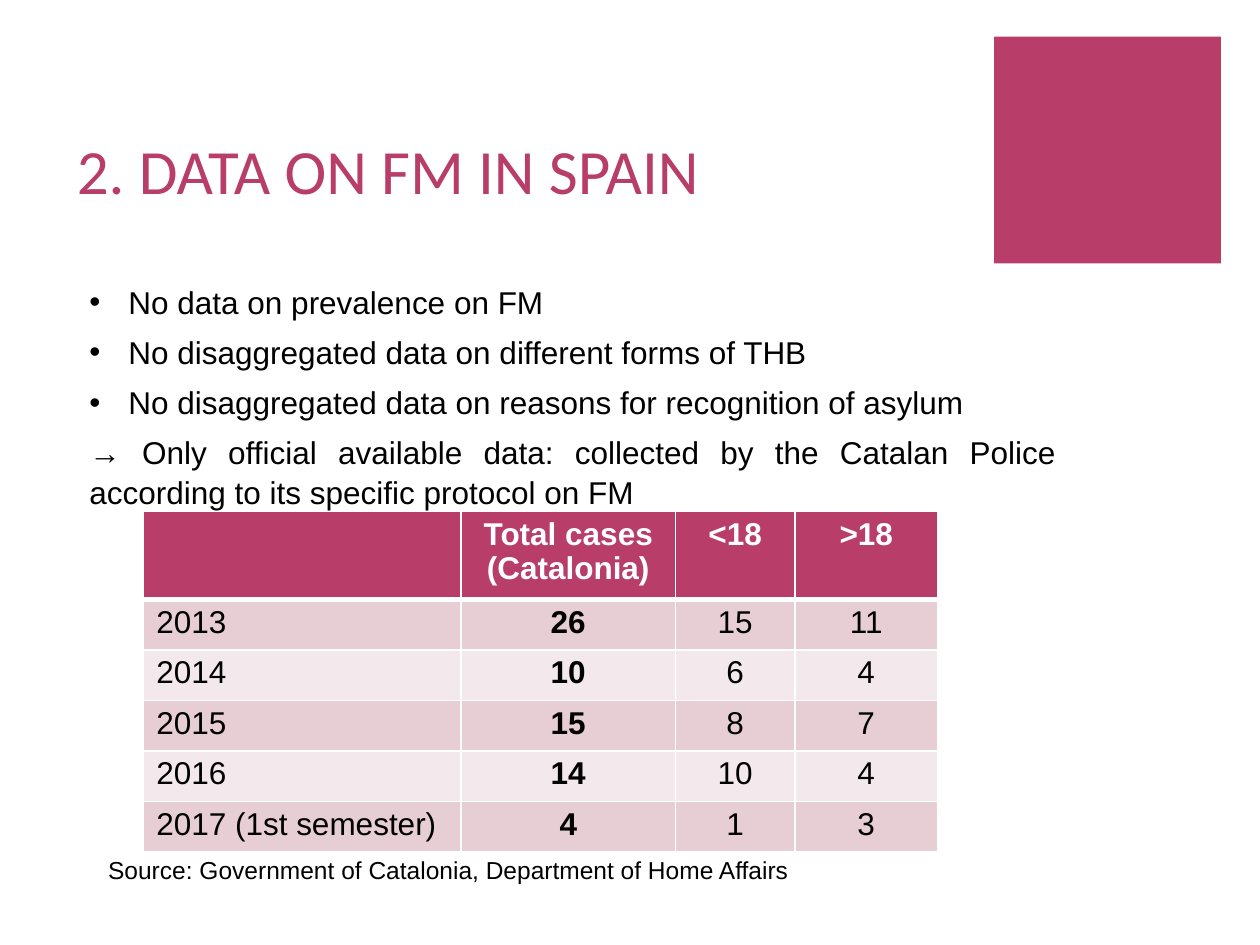
from pptx import Presentation
from pptx.dml.color import RGBColor
from pptx.enum.shapes import MSO_SHAPE
from pptx.enum.text import MSO_ANCHOR, MSO_AUTO_SIZE, PP_ALIGN
from pptx.oxml.ns import qn
from pptx.util import Inches, Pt
from lxml.etree import SubElement, Element

COLORS = {
    "accent": "B83D68",
    "dark band": "E6CED4",
    "light band": "F3E8EB",
    "white": "FFFFFF",
    "black": "000000",
}


def set_font(paragraph, size, color="black", name="Arial", bold=False):
    paragraph.font.name = name
    paragraph.font.size = Pt(size)
    paragraph.font.bold = bold
    paragraph.font.color.rgb = RGBColor.from_string(COLORS[color])


def set_borders(cell, widths):
    properties = cell._tc.get_or_add_tcPr()
    for index, (side, width) in enumerate(widths.items()):
        line = Element(qn(f"a:ln{side}"), w=str(Pt(width)))
        fill = SubElement(line, qn("a:solidFill"))
        SubElement(fill, qn("a:srgbClr"), val=COLORS["white"])
        properties.insert(index, line)


presentation = Presentation()
presentation.slide_width = Inches(10)
presentation.slide_height = Inches(7.5)
slide = presentation.slides.add_slide(presentation.slide_layouts[1])

# Corner square
square = slide.shapes.add_shape(
    MSO_SHAPE.RECTANGLE, Inches(7.89), Inches(0.29), Inches(1.8), Inches(1.8))
square.shadow.inherit = False
square.fill.solid()
square.fill.fore_color.rgb = RGBColor.from_string(COLORS["accent"])
square.line.fill.background()

# Title
title = slide.shapes.title
title.left, title.top = Inches(0.51), Inches(0.44)
title.width, title.height = Inches(7.12), Inches(1.25)
title.text_frame.text = "2. DATA ON FM IN SPAIN"
title.text_frame.vertical_anchor = MSO_ANCHOR.BOTTOM
title.text_frame.auto_size = MSO_AUTO_SIZE.NONE
heading = title.text_frame.paragraphs[0]
heading.alignment = PP_ALIGN.LEFT
set_font(heading, 36, "accent", "Calibri")

# Bullet list, closed by an unbulleted conclusion
body = slide.placeholders[1]
body.left, body.top = Inches(0.61), Inches(2.18)
body.width, body.height = Inches(7.87), Inches(1.87)
body.text_frame.auto_size = MSO_AUTO_SIZE.NONE
body.text_frame.text = "\n".join([
    "No data on prevalence on FM",
    "No disaggregated data on different forms of THB",
    "No disaggregated data on reasons for recognition of asylum",
    "→ Only official available data: collected by the Catalan Police "
    "according to its specific protocol on FM",
])
for paragraph in body.text_frame.paragraphs:
    paragraph.alignment = PP_ALIGN.JUSTIFY
    paragraph.line_spacing = 1.05
    paragraph.space_before = Pt(0)
    paragraph.space_after = Pt(6)
    properties = paragraph._p.get_or_add_pPr()
    bulleted = not paragraph.text.startswith("→")
    indent = Inches(0.31) if bulleted else 0
    properties.set("marL", str(indent))
    properties.set("indent", str(-indent))
    if bulleted:
        SubElement(properties, qn("a:buFont"), typeface="Arial")
        SubElement(properties, qn("a:buChar"), char="•")
    else:
        SubElement(properties, qn("a:buNone"))
    set_font(paragraph, 18)

# Table of cases
rows = [
    ["", "Total cases (Catalonia)", "<18", ">18"],
    ["2013", "26", "15", "11"],
    ["2014", "10", "6", "4"],
    ["2015", "15", "8", "7"],
    ["2016", "14", "10", "4"],
    ["2017 (1st semester)", "4", "1", "3"],
]
column_widths = [2.52, 1.7, 0.95, 1.13]
table = slide.shapes.add_table(
    len(rows), len(column_widths),
    Inches(1.14), Inches(4.06), Inches(6.3), Inches(2.7)).table
for column, width in zip(table.columns, column_widths):
    column.width = Inches(width)

for row_index, values in enumerate(rows):
    header = row_index == 0
    table.rows[row_index].height = Inches(0.7 if header else 0.4)
    band = "accent" if header else "dark band" if row_index % 2 else "light band"
    for column_index, value in enumerate(values):
        cell = table.cell(row_index, column_index)
        cell.fill.solid()
        cell.fill.fore_color.rgb = RGBColor.from_string(COLORS[band])
        set_borders(cell, {"L": 1, "R": 1, "T": 3 if row_index == 1 else 1,
                           "B": 3 if header else 1})
        cell.text = value
        paragraph = cell.text_frame.paragraphs[0]
        paragraph.alignment = PP_ALIGN.CENTER if column_index else PP_ALIGN.LEFT
        paragraph.line_spacing = 0.97
        set_font(paragraph, 18, "white" if header else "black",
                 bold=header or column_index == 1)

# Source line
source = slide.shapes.add_textbox(
    Inches(0.76), Inches(6.74), Inches(7.56), Inches(0.34))
source.text_frame.word_wrap = True
source.text_frame.text = "Source: Government of Catalonia, Department of Home Affairs"
set_font(source.text_frame.paragraphs[0], 14)

presentation.save("out.pptx")
